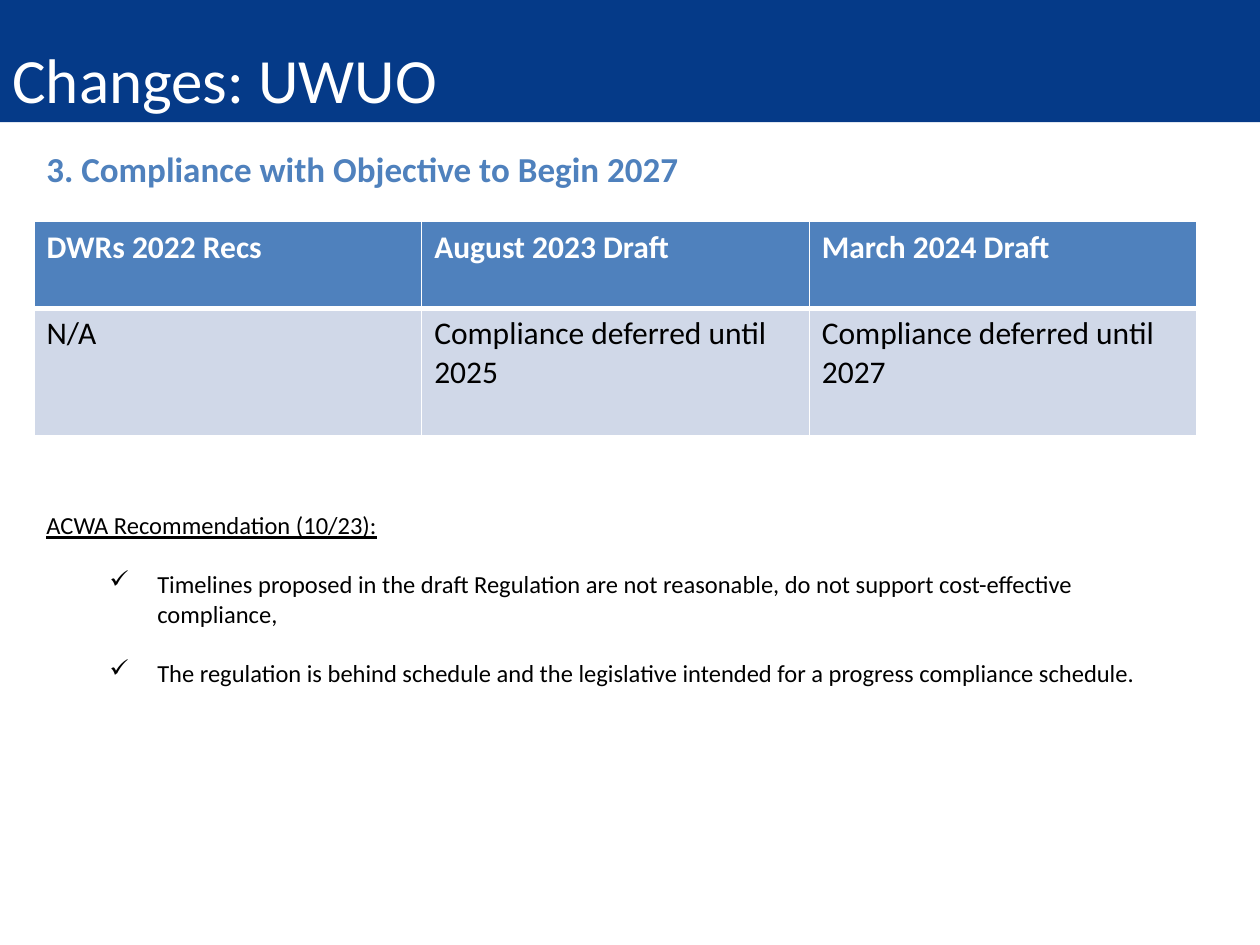
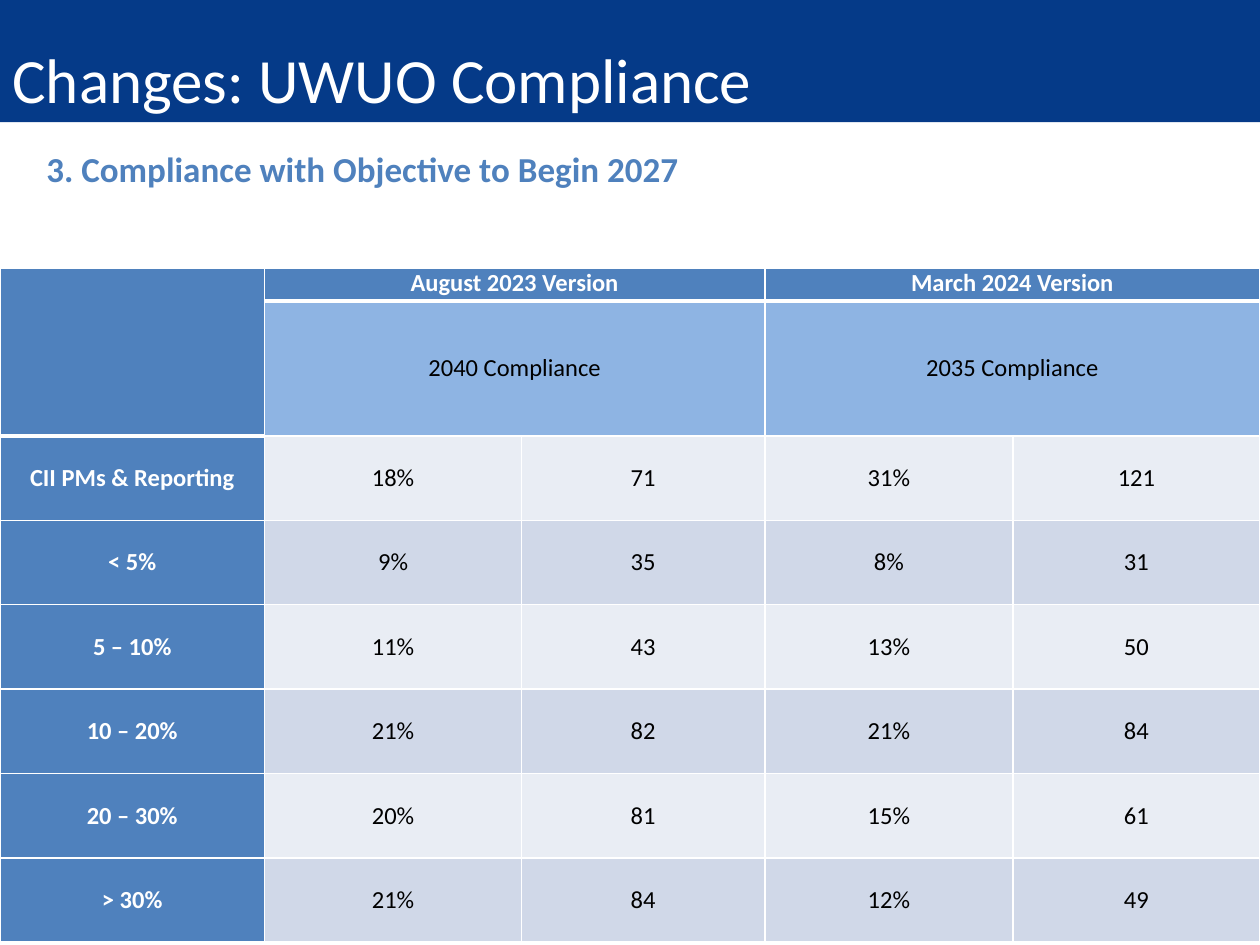
from dataclasses import dataclass
from itertools import accumulate
from lxml.etree import SubElement
from pptx import Presentation
from pptx.dml.color import RGBColor
from pptx.enum.shapes import MSO_SHAPE
from pptx.enum.text import MSO_ANCHOR, PP_ALIGN
from pptx.oxml.ns import qn
from pptx.util import Inches, Pt

FONT = "Calibri"
NAVY = RGBColor(0x05, 0x3A, 0x88)
BLUE = RGBColor(0x4F, 0x81, 0xBD)
SKY = RGBColor(0x8E, 0xB4, 0xE3)
BAND_DARK = RGBColor(0xD0, 0xD8, 0xE8)
BAND_LIGHT = RGBColor(0xE9, 0xED, 0xF4)
WHITE = RGBColor(0xFF, 0xFF, 0xFF)
BLACK = RGBColor(0x00, 0x00, 0x00)

MARGIN, BODY_W = 0.27, 9.23
THIN, THICK = 1, 3
SUBTITLE = "3. Compliance with Objective to Begin 2027"
DRAFTS = [
    ["DWRs 2022 Recs", "August 2023 Draft", "March 2024 Draft"],
    ["N/A", "Compliance deferred until 2025", "Compliance deferred until 2027"],
]
RECOMMENDATIONS = [
    "Timelines proposed in the draft Regulation are not reasonable, "
    "do not support cost-effective compliance,",
    "The regulation is behind schedule and the legislative intended "
    "for a progress compliance schedule.",
]
COMPLIANCE = [
    ["", "August 2023 Version", "", "March 2024 Version", ""],
    ["", "2040 Compliance", "", "2035 Compliance", ""],
    ["CII PMs & Reporting", "18%", "71", "31%", "121"],
    ["< 5%", "9%", "35", "8%", "31"],
    ["5 – 10%", "11%", "43", "13%", "50"],
    ["10 – 20%", "21%", "82", "21%", "84"],
    ["20 – 30%", "20%", "81", "15%", "61"],
    ["> 30%", "21%", "84", "12%", "49"],
]


@dataclass
class CellStyle:
    fill: RGBColor
    color: RGBColor = BLACK
    bold: bool = False
    size: int = 14
    align: PP_ALIGN = PP_ALIGN.CENTER
    anchor: MSO_ANCHOR = MSO_ANCHOR.MIDDLE
    top: int = THIN
    bottom: int = THIN


def style_text(p, size: int, color: RGBColor, bold: bool = False) -> None:
    p.font.name, p.font.size, p.font.bold = FONT, Pt(size), bold
    p.font.color.rgb = color


def add_text(s, top: float, height: float):
    box = s.shapes.add_textbox(
        Inches(MARGIN), Inches(top), Inches(BODY_W), Inches(height))
    box.text_frame.word_wrap = True
    return box.text_frame


def add_heading(prs, s, title: str) -> None:
    band = s.shapes.add_shape(
        MSO_SHAPE.RECTANGLE, 0, 0, prs.slide_width, Inches(0.97))
    band.shadow.inherit = False
    band.fill.solid()
    band.fill.fore_color.rgb = NAVY
    band.line.fill.background()
    tf = band.text_frame
    tf.vertical_anchor = MSO_ANCHOR.BOTTOM
    p = tf.paragraphs[0]
    p.text, p.alignment, p.line_spacing = title, PP_ALIGN.LEFT, Pt(36)
    style_text(p, 36, WHITE)
    p = add_text(s, 1.12, 0.44).paragraphs[0]
    p.text = SUBTITLE
    style_text(p, 20, BLUE, True)


def set_borders(cell, top: int, bottom: int) -> None:
    props = cell._tc.get_or_add_tcPr()
    widths = {"a:lnL": THIN, "a:lnR": THIN, "a:lnT": top, "a:lnB": bottom}
    for tag, width in widths.items():
        line = SubElement(props, qn(tag), w=str(Pt(width)))
        fill = SubElement(line, qn("a:solidFill"))
        SubElement(fill, qn("a:srgbClr"), val=str(WHITE))


def fill_cell(cell, text: str, style: CellStyle) -> None:
    set_borders(cell, style.top, style.bottom)
    cell.fill.solid()
    cell.fill.fore_color.rgb = style.fill
    cell.vertical_anchor = style.anchor
    p = cell.text_frame.paragraphs[0]
    if text:
        p.text = text
    p.alignment = style.align
    style_text(p, style.size, style.color, style.bold)


def add_grid(s, left: float, top: float, cols: list[float], rows: list[float]):
    table = s.shapes.add_table(
        len(rows), len(cols), Inches(left), Inches(top),
        Inches(sum(cols)), Inches(sum(rows))).table
    table.horz_banding = False
    for lines, sizes, attr in ((table.columns, cols, "width"),
                               (table.rows, rows, "height")):
        edges = [Inches(e) for e in accumulate(sizes, initial=0)]
        for line, start, end in zip(lines, edges, edges[1:]):
            setattr(line, attr, end - start)
    return table


def add_drafts_table(s) -> None:
    table = add_grid(s, MARGIN, 1.76, [BODY_W / 3] * 3, [0.69, 1.01])
    plain = dict(size=18, align=PP_ALIGN.LEFT, anchor=MSO_ANCHOR.TOP)
    styles = [CellStyle(BLUE, WHITE, True, bottom=THICK, **plain),
              CellStyle(BAND_DARK, top=THICK, **plain)]
    for r, (texts, style) in enumerate(zip(DRAFTS, styles)):
        for c, text in enumerate(texts):
            fill_cell(table.cell(r, c), text, style)


def compliance_style(row: int, col: int) -> CellStyle:
    if row == 0:
        return CellStyle(BLUE, WHITE, True, anchor=MSO_ANCHOR.TOP, bottom=THICK)
    if col == 0:
        return CellStyle(BLUE, WHITE, True,
                         top=THICK if row == 2 else THIN,
                         bottom=THICK if row == 1 else THIN)
    if row == 1:
        return CellStyle(SKY, top=THICK)
    return CellStyle(BAND_DARK if row % 2 else BAND_LIGHT)


def add_compliance_table(s) -> None:
    table = add_grid(s, 0, 2.13, [2.1, 2.04, 1.93, 1.97, 1.96],
                     [0.26, 1.07] + [0.67] * 6)
    for r, texts in enumerate(COMPLIANCE):
        for c, text in enumerate(texts):
            cell = table.cell(r, c)
            cell.margin_left = cell.margin_right = 0
            cell.margin_top = cell.margin_bottom = 0
            fill_cell(cell, text, compliance_style(r, c))
    table.cell(0, 0).merge(table.cell(1, 0))
    for r in (0, 1):
        for c in (1, 3):
            table.cell(r, c).merge(table.cell(r, c + 1))


def add_recommendations(s) -> None:
    tf = add_text(s, 4, 1.51)
    p = tf.paragraphs[0]
    p.text = "ACWA Recommendation (10/23):"
    style_text(p, 14, BLACK)
    p.font.underline = True
    for text in RECOMMENDATIONS:
        p = tf.add_paragraph()
        p.text, p.level, p.space_before = text, 1, Pt(17)
        props = p._p.get_or_add_pPr()
        props.set("marL", str(Inches(0.88)))
        props.set("indent", str(Inches(-0.38)))
        SubElement(props, qn("a:buFont"), typeface="Wingdings")
        SubElement(props, qn("a:buChar"), char="ü")
        style_text(p, 14, BLACK)


def main() -> None:
    prs = Presentation()
    prs.slide_width, prs.slide_height = Inches(10), Inches(7.5)
    blank = prs.slide_layouts[6]

    s = prs.slides.add_slide(blank)
    add_heading(prs, s, "Changes: UWUO")
    add_drafts_table(s)
    add_recommendations(s)

    s = prs.slides.add_slide(blank)
    add_heading(prs, s, "Changes: UWUO Compliance")
    add_compliance_table(s)

    prs.save("out.pptx")


if __name__ == "__main__":
    main()
